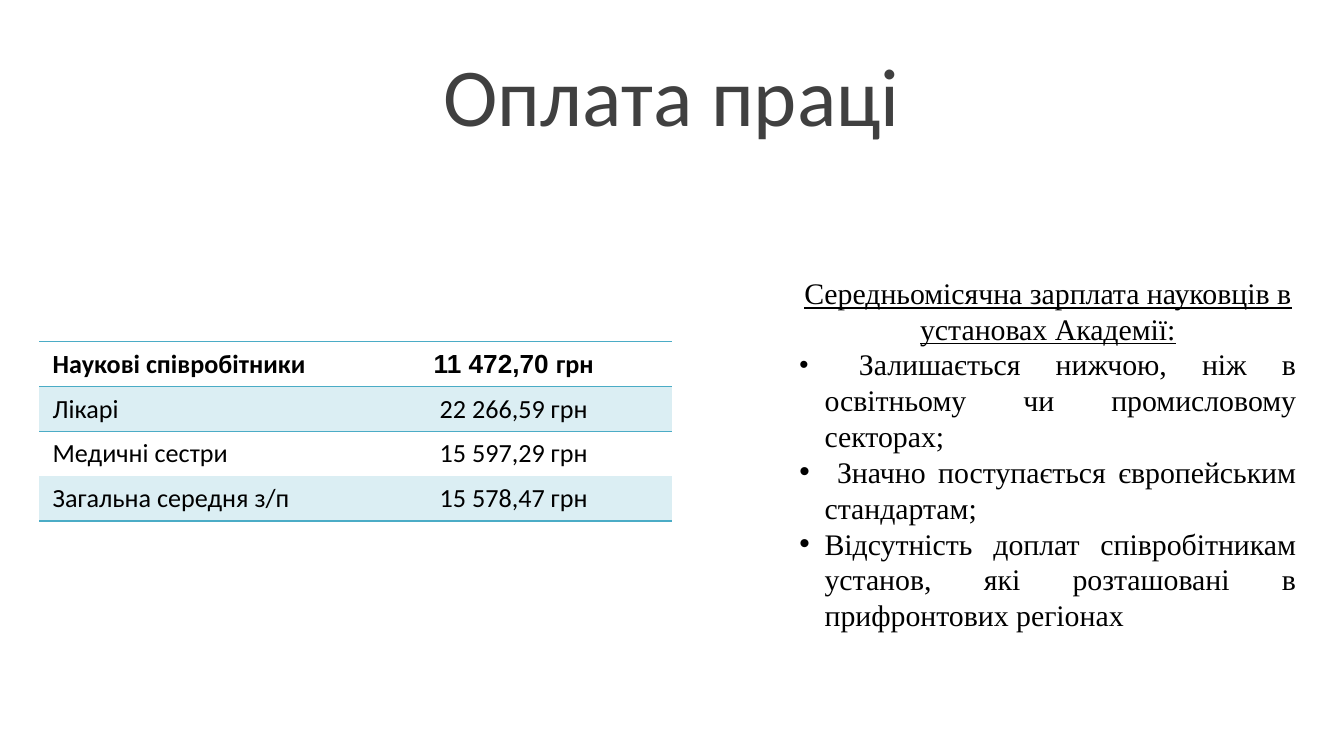
from pptx import Presentation
from pptx.dml.color import RGBColor
from pptx.enum.text import MSO_ANCHOR, PP_ALIGN as Align
from pptx.oxml.ns import qn
from pptx.util import Pt
from lxml.etree import SubElement
from dataclasses import dataclass

PX = 9525  # EMU per px, 96 px to the inch


@dataclass(frozen=True)
class Theme:
    ink: str = "000000"
    heading: str = "404040"
    accent: str = "4BACC6"
    band_alpha: int = 20000
    sans: str = "Calibri"
    digits: str = "Arial"
    serif: str = "Times New Roman"
    title_size: int = 44
    body_size: int = 16
    table_size: int = 14


theme = Theme()


def add_run(paragraph, text, size, font, color=theme.ink, bold=False, underline=False):
    run = paragraph.add_run()
    run.text = text
    run.font.size = Pt(size)
    run.font.name = font
    run.font.bold = bold
    run.font.underline = underline
    run.font.color.rgb = RGBColor.from_string(color)


def add_frame(left, top, width, height):
    """Add a wrapped, vertically centred text box and return its text frame."""
    box = slide.shapes.add_textbox(left * PX, top * PX, width * PX, height * PX)
    frame = box.text_frame
    frame.word_wrap = True
    frame.vertical_anchor = MSO_ANCHOR.MIDDLE
    return frame


deck = Presentation()
deck.slide_width, deck.slide_height = 960 * PX, 540 * PX
slide = deck.slides.add_slide(deck.slide_layouts[6])

# Title
title = add_frame(48, 22, 864, 90).paragraphs[0]
title.alignment = Align.CENTER
add_run(title, "Оплата праці", theme.title_size, theme.sans, theme.heading)

# Salary table
salaries = [
    ("Наукові співробітники", "11 472,70 "),
    ("Лікарі", "22 266,59 "),
    ("Медичні сестри", "15 597,29 "),
    ("Загальна середня з/п", "15 578,47 "),
]
ROW, COLUMN = 32, 226
last = len(salaries) - 1
salary_table = slide.shapes.add_table(
    len(salaries), 2, 28 * PX, 244 * PX, 2 * COLUMN * PX, len(salaries) * ROW * PX
).table
salary_table.horz_banding = False
style_id = salary_table._tbl.tblPr.find(qn("a:tableStyleId"))
style_id.text = "{2D5ABB26-0587-4C30-8999-92F81FD0307C}"  # no style, no grid

for row, (staff, amount) in enumerate(salaries):
    is_head = row == 0
    staff_cell, pay_cell = salary_table.cell(row, 0), salary_table.cell(row, 1)
    add_run(staff_cell.text_frame.paragraphs[0], staff, theme.table_size, theme.sans, bold=is_head)
    pay = pay_cell.text_frame.paragraphs[0]
    pay.alignment = Align.CENTER
    add_run(pay, amount, theme.table_size, theme.digits if is_head else theme.sans, bold=is_head)
    add_run(pay, "грн", theme.table_size, theme.sans, bold=is_head)

    edges = {0: ["a:lnT", "a:lnB"], 1: ["a:lnT"], last: ["a:lnB"]}.get(row, [])
    for cell in (staff_cell, pay_cell):
        properties = cell._tc.get_or_add_tcPr()
        for edge in edges:
            line = SubElement(properties, qn(edge), w=str(Pt(1)))
            line_fill = SubElement(line, qn("a:solidFill"))
            SubElement(line_fill, qn("a:srgbClr"), val=theme.accent)
        if row % 2:
            band = SubElement(properties, qn("a:solidFill"))
            band_color = SubElement(band, qn("a:srgbClr"), val=theme.accent)
            SubElement(band_color, qn("a:alpha"), val=str(theme.band_alpha))
        else:
            cell.fill.background()

# Conclusions
conclusions = add_frame(564, 191, 369, 266)
conclusions.margin_left = conclusions.margin_right = 7 * PX
conclusions.margin_top = conclusions.margin_bottom = 4 * PX
lead = conclusions.paragraphs[0]
lead.alignment = Align.CENTER
add_run(lead, "Середньомісячна зарплата науковців в установах Академії:",
        theme.body_size, theme.serif, underline=True)

points = [
    [(" ", theme.table_size),
     ("Залишається нижчою, ніж в освітньому чи промисловому секторах;", theme.body_size)],
    [(" Значно поступається європейським стандартам; ", theme.body_size)],
    [("Відсутність доплат співробітникам установ, які розташовані в прифронтових регіонах",
      theme.body_size)],
]
INDENT = 18 * PX
for parts in points:
    point = conclusions.add_paragraph()
    point.alignment = Align.JUSTIFY
    properties = point._p.get_or_add_pPr()
    properties.set("marL", str(INDENT))
    properties.set("indent", str(-INDENT))
    SubElement(properties, qn("a:buFont"), typeface=theme.digits)
    SubElement(properties, qn("a:buChar"), char="•")
    for text, size in parts:
        add_run(point, text, size, theme.serif)

deck.save("out.pptx")
